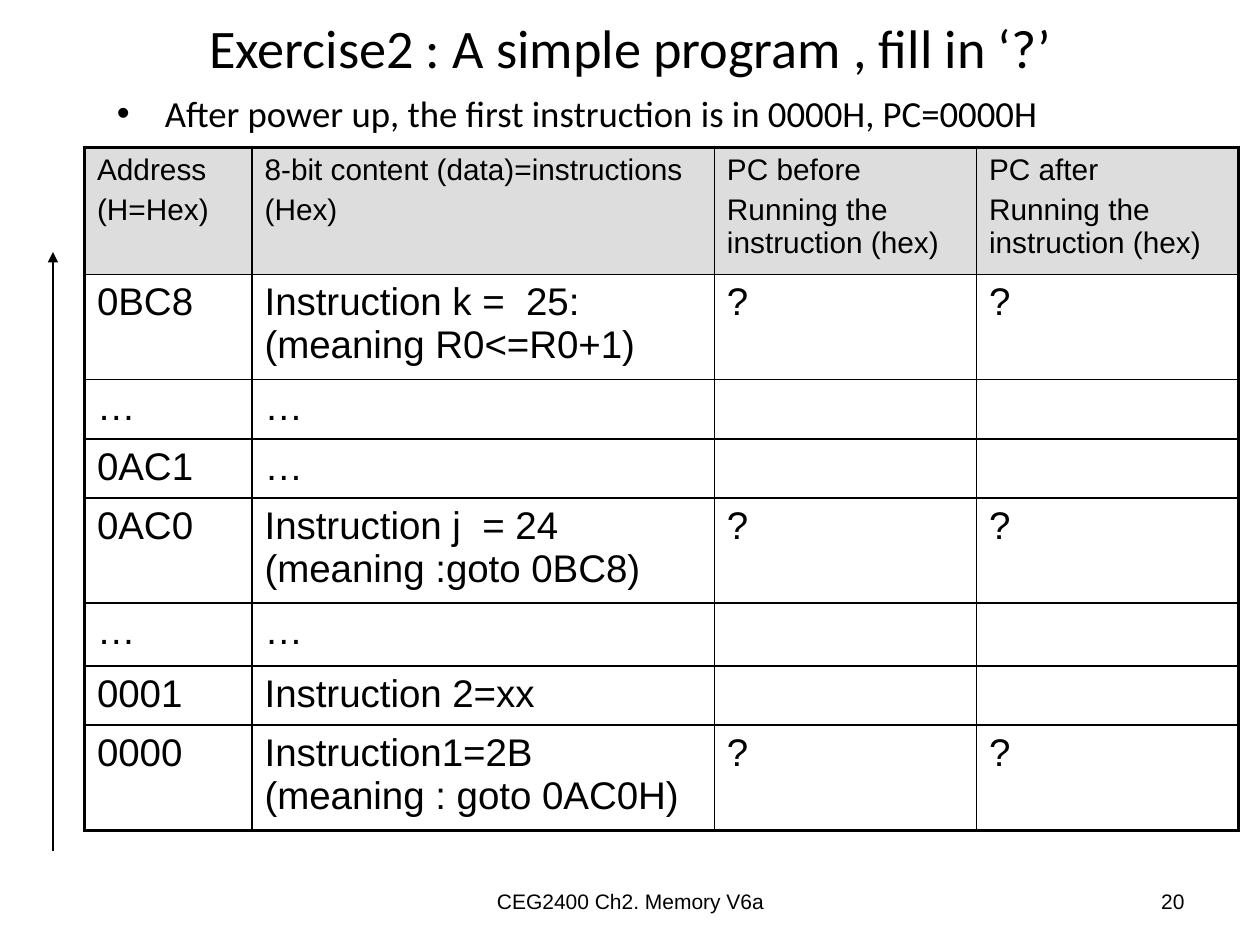
from lxml import etree
from pptx import Presentation
from pptx.dml.color import RGBColor
from pptx.enum.shapes import MSO_CONNECTOR
from pptx.enum.text import MSO_ANCHOR, PP_ALIGN
from pptx.oxml.ns import qn
from pptx.util import Inches, Pt

LEFT, CENTER, RIGHT = PP_ALIGN.LEFT, PP_ALIGN.CENTER, PP_ALIGN.RIGHT
TOP, MIDDLE = MSO_ANCHOR.TOP, MSO_ANCHOR.MIDDLE
STRAIGHT = MSO_CONNECTOR.STRAIGHT

HEADER = [
    "Address\n(H=Hex)",
    "8-bit content (data)=instructions\n(Hex)",
    "PC before\nRunning the instruction (hex)",
    "PC after\nRunning the instruction (hex)",
]
MEMORY = [
    ["0BC8", "Instruction k =  25: (meaning R0<=R0+1)", "?", "?"],
    ["…", "…", "", ""],
    ["0AC1", "…", "", ""],
    ["0AC0", "Instruction j  = 24 (meaning :goto 0BC8)", "?", "?"],
    ["…", "…", "", ""],
    ["0001", "Instruction 2=xx", "", ""],
    ["0000", "Instruction1=2B (meaning : goto 0AC0H)", "?", "?"],
]
COL_WIDTHS = [1.33, 3.67, 2.08, 2.08]
ROW_HEIGHTS = [1.01, 0.83, 0.47, 0.47, 0.83, 0.5, 0.47, 0.83]


def rgb(value):
    return RGBColor.from_string(value)


def write(tf, text, *, size, font="Arial", color="000000", align=LEFT):
    """Fill a text frame, one paragraph for each line of text."""
    for i, line in enumerate(text.split("\n")):
        p = tf.add_paragraph() if i else tf.paragraphs[0]
        p.alignment = align
        if i:
            p.space_before = Pt(0.2 * size)
        if line:
            r = p.add_run()
            r.text = line
            r.font.size = Pt(size)
            r.font.name = font
            r.font.color.rgb = rgb(color)


def set_bullet(p, indent):
    pPr = p._p.get_or_add_pPr()
    pPr.set("marL", str(Inches(indent)))
    pPr.set("indent", str(-Inches(indent)))
    etree.SubElement(pPr, qn("a:buFont"), typeface="Arial")
    etree.SubElement(pPr, qn("a:buChar"), char="•")


def set_borders(cell, color, widths):
    """Draw the cell's borders; widths are left, right, top, bottom in points."""
    tcPr = cell._tc.get_or_add_tcPr()
    for i, (side, width) in enumerate(zip("LRTB", widths)):
        ln = etree.Element(qn(f"a:ln{side}"), w=str(Pt(width)))
        fill = etree.SubElement(ln, qn("a:solidFill"))
        etree.SubElement(fill, qn("a:srgbClr"), val=color)
        tcPr.insert(i, ln)


class SlideBuilder:
    ink = "000000"
    header_fill = "DDDDDD"
    header_size, body_size = 17, 22
    inner, outer = 1, 2.25

    def __init__(self, prs):
        self.slide = prs.slides.add_slide(prs.slide_layouts[6])

    def text(self, text, x, y, w, h, *, anchor=MIDDLE, bullet=None, **fmt):
        sp = self.slide.shapes.add_textbox(Inches(x), Inches(y), Inches(w), Inches(h))
        tf = sp.text_frame
        tf.word_wrap = True
        tf.vertical_anchor = anchor
        write(tf, text, color=self.ink, **fmt)
        if bullet:
            set_bullet(tf.paragraphs[0], bullet)

    def table(self, rows, x, y, col_widths, row_heights):
        n_rows, n_cols = len(rows), len(col_widths)
        table = self.slide.shapes.add_table(
            n_rows, n_cols, Inches(x), Inches(y),
            Inches(sum(col_widths)), Inches(sum(row_heights))).table
        for col, width in zip(table.columns, col_widths):
            col.width = Inches(width)
        for row, height in zip(table.rows, row_heights):
            row.height = Inches(height)
        for i, row in enumerate(rows):
            for j, text in enumerate(row):
                cell = table.cell(i, j)
                if i == 0:
                    cell.fill.solid()
                    cell.fill.fore_color.rgb = rgb(self.header_fill)
                else:
                    cell.fill.background()
                size = self.body_size if i else self.header_size
                write(cell.text_frame, text, size=size, color=self.ink)
                edges = (j == 0, j == n_cols - 1, i == 0, i == n_rows - 1)
                set_borders(cell, self.ink,
                            [self.outer if edge else self.inner for edge in edges])

    def arrow(self, x1, y1, x2, y2, width=0.75):
        line = self.slide.shapes.add_connector(
            STRAIGHT, Inches(x1), Inches(y1), Inches(x2), Inches(y2))
        line.line.color.rgb = rgb(self.ink)
        line.line.width = Pt(width)
        etree.SubElement(line.line._get_or_add_ln(), qn("a:tailEnd"), type="triangle")
        etree.SubElement(line._element.spPr, qn("a:effectLst"))


def main():
    prs = Presentation()
    prs.slide_width, prs.slide_height = Inches(10), Inches(7.5)
    s = SlideBuilder(prs)
    s.text("Exercise2 : A simple program , fill in ‘?’", 0.5, 0, 9, 0.75,
           size=31, font="Calibri", align=CENTER)
    s.text("After power up, the first instruction is in 0000H, PC=0000H",
           0.83, 0.67, 8.83, 4.5, anchor=TOP, bullet=0.38, size=21, font="Calibri")
    s.text("CEG2400 Ch2. Memory V6a", 3.42, 6.95, 3.17, 0.4, size=12, align=CENTER)
    s.text("20", 7.17, 6.95, 2.33, 0.4, size=12, align=RIGHT)
    s.table([HEADER] + MEMORY, 0.67, 1.17, COL_WIDTHS, ROW_HEIGHTS)
    s.arrow(0.42, 6.75, 0.42, 2)
    prs.save("out.pptx")


if __name__ == "__main__":
    main()
